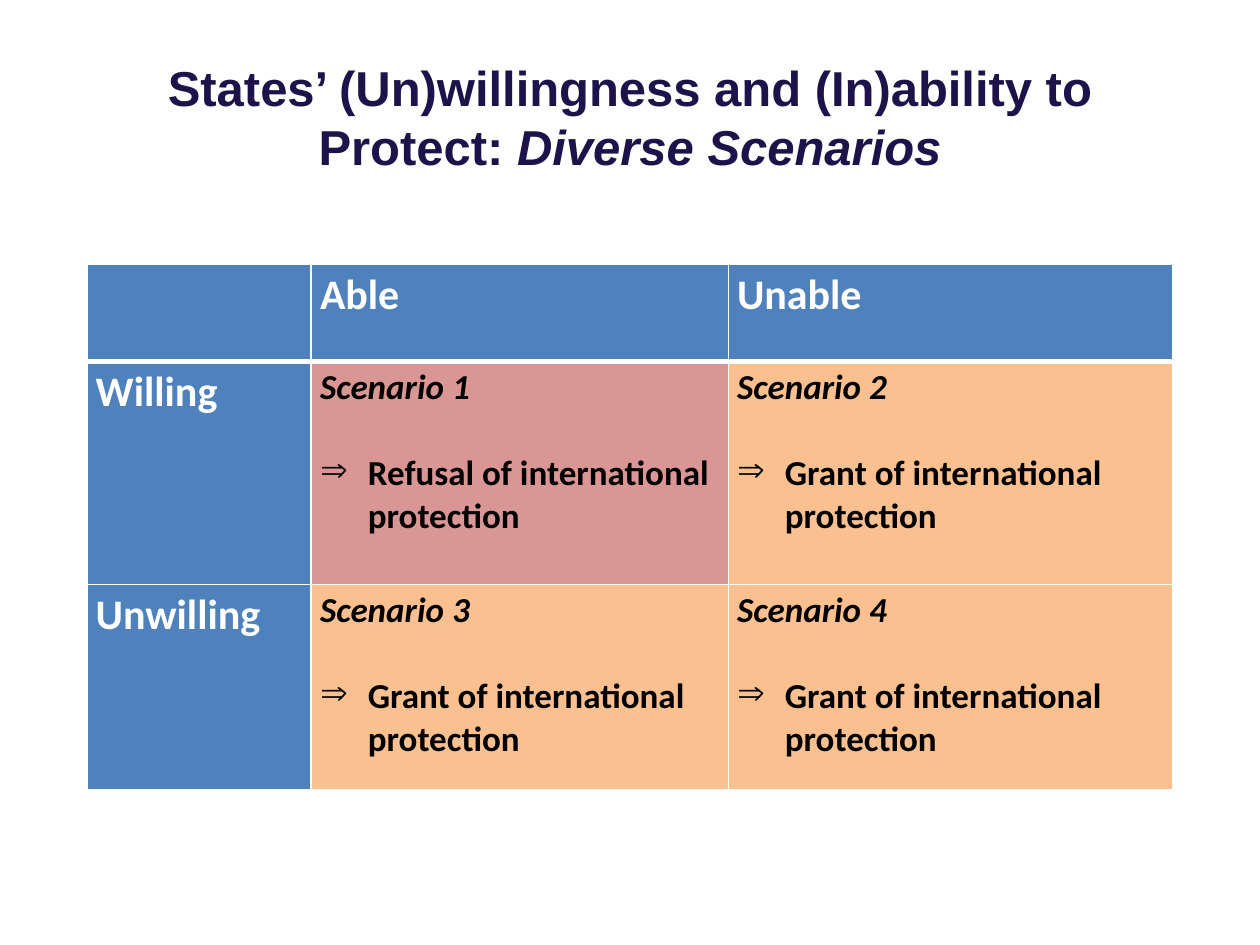
from dataclasses import dataclass

from lxml import etree
from pptx import Presentation
from pptx.dml.color import RGBColor
from pptx.enum.text import MSO_ANCHOR, PP_ALIGN
from pptx.oxml.ns import qn
from pptx.util import Inches, Pt

CENTER = PP_ALIGN.CENTER
LEFT = PP_ALIGN.LEFT
MIDDLE = MSO_ANCHOR.MIDDLE
TOP = MSO_ANCHOR.TOP
TITLE_ONLY = 5


@dataclass(frozen=True)
class Theme:
    """Colours, fonts and type sizes of the slide."""
    title_color: str = "1D1249"
    header_fill: str = "4F81BD"
    refusal_fill: str = "D99694"
    grant_fill: str = "FAC090"
    light: str = "FFFFFF"
    dark: str = "000000"
    title_font: str = "Arial"
    table_font: str = "Calibri"
    title_size: int = 28
    header_size: int = 24
    body_size: int = 20
    outcome_gap: float = 24.4
    thin_border: int = 1
    thick_border: int = 3


THEME = Theme()
COLUMN_WIDTHS = (1.78, 3.31, 3.53)
ROW_HEIGHTS = (0.77, 1.77, 1.63)
COLUMN_HEADERS = ("", "Able", "Unable")
REFUSAL = ("Refusal of international protection", THEME.refusal_fill)
GRANT = ("Grant of international protection", THEME.grant_fill)
SCENARIO_ROWS = (
    ("Willing", (("Scenario 1", *REFUSAL), ("Scenario 2", *GRANT))),
    ("Unwilling", (("Scenario 3", *GRANT), ("Scenario 4", *GRANT))),
)


def add_text(paragraph, text, *, font, size, color, italic=False, align=LEFT):
    """Add a bold run to a paragraph with the given format."""
    paragraph.alignment = align
    run = paragraph.add_run()
    run.text = text
    run.font.name = font
    run.font.size = Pt(size)
    run.font.bold = True
    run.font.italic = italic
    run.font.color.rgb = RGBColor.from_string(color)


def set_arrow_bullet(paragraph):
    """Give a paragraph a hanging double-arrow bullet."""
    properties = paragraph._p.get_or_add_pPr()
    indent = Inches(0.38)
    properties.set("marL", str(indent))
    properties.set("indent", str(-indent))
    etree.SubElement(properties, qn("a:buFont"), typeface="Symbol")
    etree.SubElement(properties, qn("a:buChar"), char="⇒")


def set_borders(cell, **widths):
    """Draw white cell borders, with widths in points by side."""
    properties = cell._tc.get_or_add_tcPr()
    for side in "LRTB":
        width = Pt(widths.get(side, THEME.thin_border))
        line = etree.SubElement(properties, qn(f"a:ln{side}"), w=str(width))
        fill = etree.SubElement(line, qn("a:solidFill"))
        etree.SubElement(fill, qn("a:srgbClr"), val=THEME.light)


def format_cell(cell, fill, **border_widths):
    """Set the borders, fill, margins and anchor of a cell."""
    set_borders(cell, **border_widths)
    cell.fill.solid()
    cell.fill.fore_color.rgb = RGBColor.from_string(fill)
    cell.margin_left = cell.margin_right = Inches(0.07)
    cell.margin_top = cell.margin_bottom = Inches(0.04)
    cell.vertical_anchor = TOP


def fill_header_cell(cell, text, **border_widths):
    """Write a row or column header."""
    format_cell(cell, THEME.header_fill, **border_widths)
    if text:
        add_text(cell.text_frame.paragraphs[0], text, font=THEME.table_font,
                 size=THEME.header_size, color=THEME.light)


def fill_scenario_cell(cell, name, outcome, fill, **border_widths):
    """Write a scenario name and its bulleted outcome."""
    format_cell(cell, fill, **border_widths)
    style = {"font": THEME.table_font, "size": THEME.body_size, "color": THEME.dark}
    add_text(cell.text_frame.paragraphs[0], name, italic=True, **style)
    paragraph = cell.text_frame.add_paragraph()
    paragraph.space_before = Pt(THEME.outcome_gap)
    set_arrow_bullet(paragraph)
    add_text(paragraph, outcome, **style)


def place_title(slide, left, top, width, height):
    """Place and write the slide title."""
    title = slide.shapes.title
    title.left, title.top, title.width, title.height = left, top, width, height
    frame = title.text_frame
    frame.word_wrap = True
    frame.vertical_anchor = MIDDLE
    style = {"font": THEME.title_font, "size": THEME.title_size,
             "color": THEME.title_color, "align": CENTER}
    paragraph = frame.paragraphs[0]
    add_text(paragraph, "States’ (Un)willingness and (In)ability to Protect: ", **style)
    add_text(paragraph, "Diverse Scenarios", italic=True, **style)


def place_scenario_table(slide, left, top, width, height):
    """Place the table of willingness against ability."""
    table = slide.shapes.add_table(
        len(ROW_HEIGHTS), len(COLUMN_WIDTHS), left, top, width, height).table
    table.horz_banding = False
    for column, column_width in zip(table.columns, COLUMN_WIDTHS):
        column.width = Inches(column_width)
    for row, row_height in zip(table.rows, ROW_HEIGHTS):
        row.height = Inches(row_height)
    for column_index, text in enumerate(COLUMN_HEADERS):
        fill_header_cell(table.cell(0, column_index), text, B=THEME.thick_border)
    for row_index, (header, scenarios) in enumerate(SCENARIO_ROWS, start=1):
        top_border = THEME.thick_border if row_index == 1 else THEME.thin_border
        fill_header_cell(table.cell(row_index, 0), header, T=top_border)
        for column_index, scenario in enumerate(scenarios, start=1):
            fill_scenario_cell(table.cell(row_index, column_index), *scenario, T=top_border)


def main():
    """Build and save the presentation."""
    presentation = Presentation()
    presentation.slide_width = Inches(10)
    presentation.slide_height = Inches(7.5)
    slide = presentation.slides.add_slide(presentation.slide_layouts[TITLE_ONLY])
    place_title(slide, Inches(0.5), Inches(0.3), Inches(9), Inches(1.25))
    place_scenario_table(slide, Inches(0.69), Inches(2.1),
                         Inches(sum(COLUMN_WIDTHS)), Inches(sum(ROW_HEIGHTS)))
    presentation.save("out.pptx")


if __name__ == "__main__":
    main()
